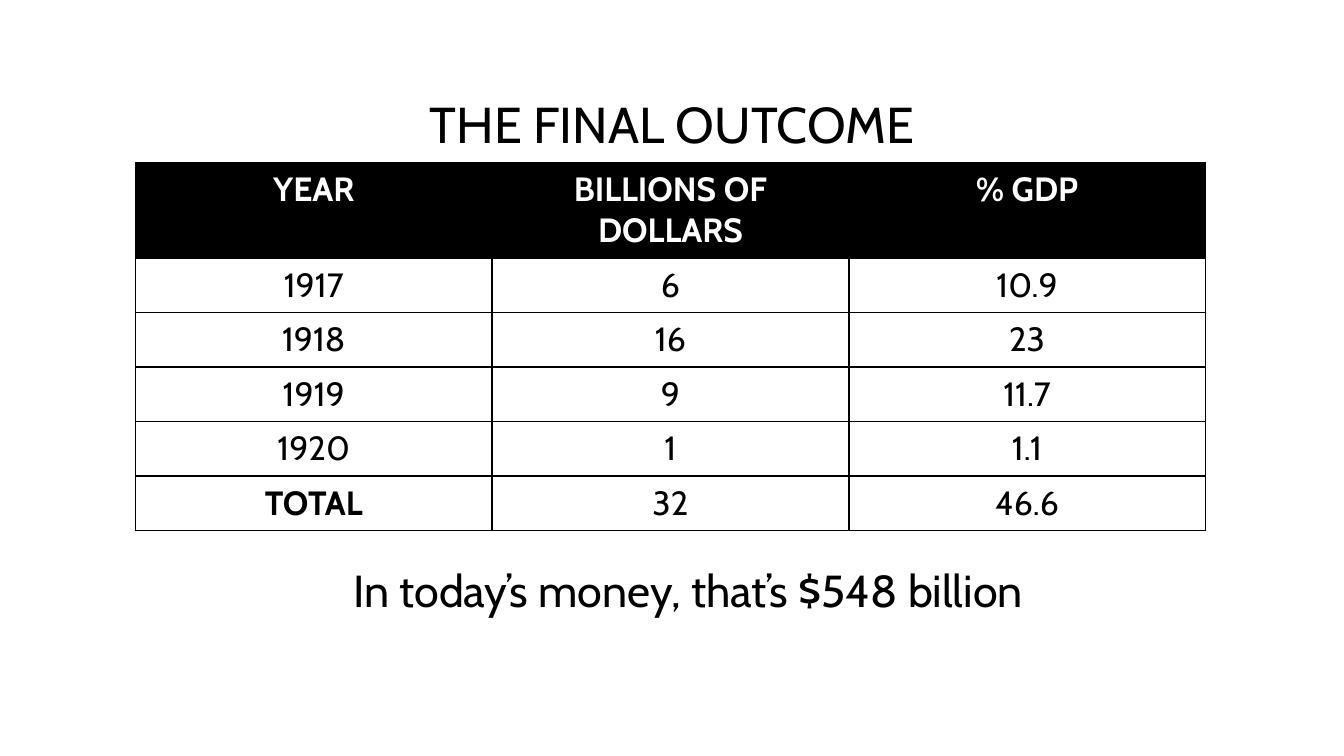
import dataclasses

import pptx
import pptx.dml.color
import pptx.enum.text
import pptx.oxml
import pptx.oxml.ns
import pptx.util

Cm = pptx.util.Cm


@dataclasses.dataclass(frozen=True)
class Theme:
    font: str = "Cabin"
    ink: str = "000000"
    paper: str = "FFFFFF"
    title_size: float = 27
    table_size: float = 18
    caption_size: float = 24
    outer_border: float = 0.75
    border: float = 1


THEME = Theme()
HEADINGS = ["YEAR", "BILLIONS OF DOLLARS", "% GDP"]
SPENDING = [
    ["1917", "6", "10.9"],
    ["1918", "16", "23"],
    ["1919", "9", "11.7"],
    ["1920", "1", "1.1"],
    ["TOTAL", "32", "46.6"],
]


def rgb(value):
    return pptx.dml.color.RGBColor.from_string(value)


def write_centred(text_frame, text, size, color=THEME.ink, bold=False):
    paragraph = text_frame.paragraphs[0]
    paragraph.alignment = pptx.enum.text.PP_ALIGN.CENTER
    run = paragraph.add_run()
    run.text = text
    run.font.name = THEME.font
    run.font.size = pptx.util.Pt(size)
    run.font.bold = bold
    run.font.color.rgb = rgb(color)
    return paragraph


def set_borders(cell, widths):
    properties = cell._tc.get_or_add_tcPr()
    for side, width in widths.items():
        properties.append(pptx.oxml.parse_xml(
            f'<a:ln{side} {pptx.oxml.ns.nsdecls("a")} w="{pptx.util.Pt(width)}">'
            f'<a:solidFill><a:srgbClr val="{THEME.ink}"/></a:solidFill>'
            f'</a:ln{side}>'))


def add_title(slide, text, left, top, width, height):
    title = slide.shapes.title
    title.left, title.top, title.width, title.height = left, top, width, height
    title.text_frame.vertical_anchor = pptx.enum.text.MSO_ANCHOR.MIDDLE
    paragraph = write_centred(title.text_frame, text, THEME.title_size)
    paragraph.line_spacing = 0.9


def add_spending_table(slide, left, top, width, header_height, row_height):
    rows = [HEADINGS] + SPENDING
    height = header_height + row_height * len(SPENDING)
    frame = slide.shapes.add_table(len(rows), len(HEADINGS), left, top, width, height)
    table = frame.table
    for row_index, values in enumerate(rows):
        header = row_index == 0
        table.rows[row_index].height = header_height if header else row_height
        edge = THEME.outer_border if header else THEME.border
        for column_index, text in enumerate(values):
            cell = table.cell(row_index, column_index)
            set_borders(cell, {"L": edge, "R": edge, "T": edge, "B": THEME.border})
            cell.fill.solid()
            cell.fill.fore_color.rgb = rgb(THEME.ink if header else THEME.paper)
            write_centred(cell.text_frame, text, THEME.table_size,
                          THEME.paper if header else THEME.ink,
                          header or text == "TOTAL")


def add_caption(slide, text, left, top, width, height):
    caption = slide.shapes.add_textbox(left, top, width, height)
    caption.text_frame.word_wrap = False
    caption.text_frame.auto_size = pptx.enum.text.MSO_AUTO_SIZE.SHAPE_TO_FIT_TEXT
    write_centred(caption.text_frame, text, THEME.caption_size)


def main():
    presentation = pptx.Presentation()
    presentation.slide_width = Cm(25.4)
    presentation.slide_height = Cm(14.29)
    slide = presentation.slides.add_slide(
        presentation.slide_layouts.get_by_name("Title Only"))
    slide.background.fill.solid()
    slide.background.fill.fore_color.rgb = rgb(THEME.paper)
    add_title(slide, "THE FINAL OUTCOME", Cm(1.9), Cm(0.74), Cm(21.6), Cm(3.32))
    add_spending_table(slide, Cm(2.56), Cm(3.07), Cm(20.22), Cm(1.27), Cm(0.94))
    add_caption(slide, "In today’s money, that’s $548 billion",
                Cm(6.02), Cm(10.52), Cm(13.97), Cm(1.27))
    presentation.save("out.pptx")


if __name__ == "__main__":
    main()
